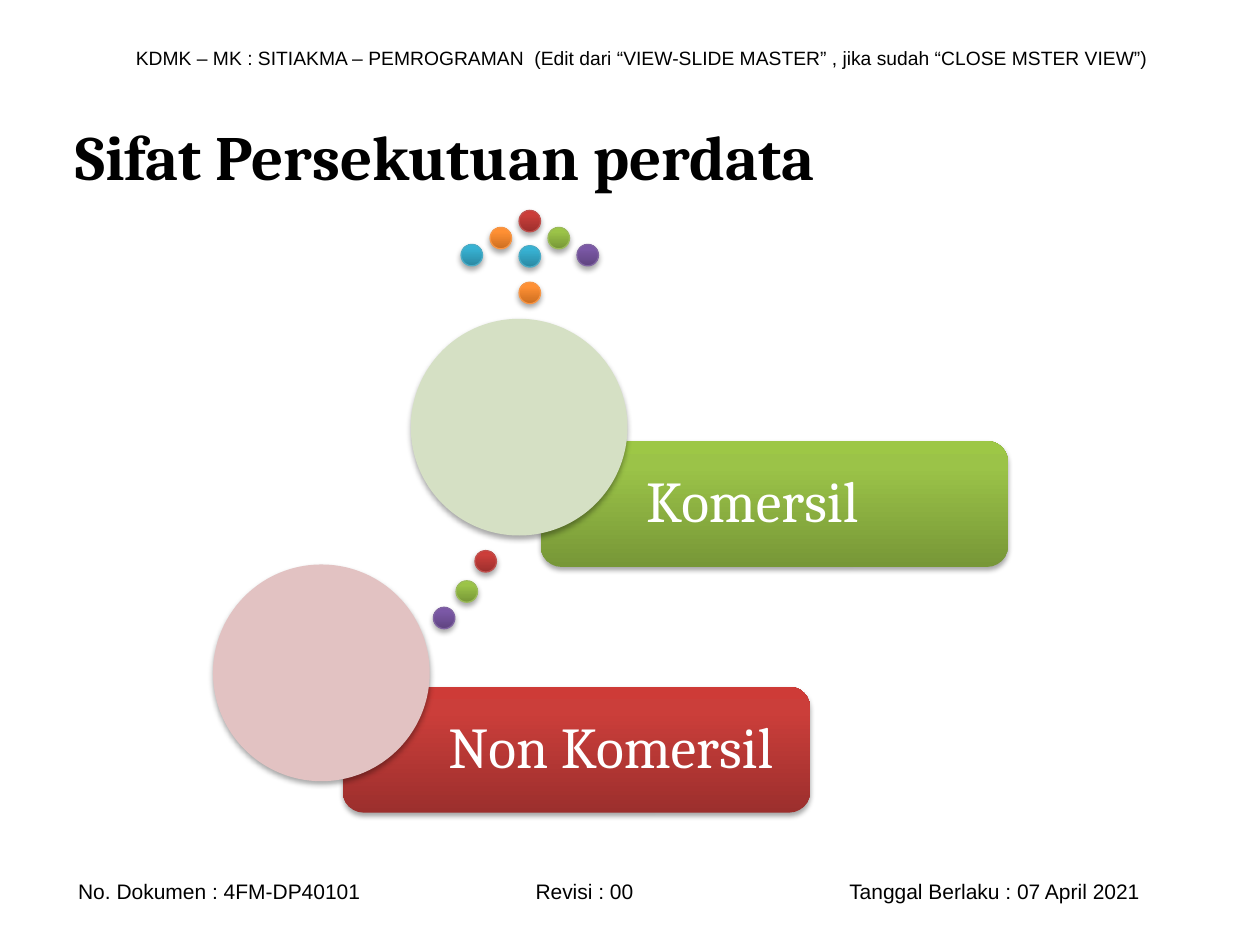
import copy

import pptx
import pptx.dml.color
import pptx.enum.shapes
import pptx.enum.text
import pptx.oxml
import pptx.oxml.ns
import pptx.util
from lxml import etree

SLIDE_WIDTH = pptx.util.Inches(10)
SLIDE_HEIGHT = pptx.util.Inches(7.5)
COLUMNS, ROWS = 100, 75
DOT_SIZE = 1.7
CIRCLE_SIZE = 17.2
BAR_OFFSET = (10.3, 9.7)
BAR_SIZE = (37.1, 10)

COLORS = {"black": "000000", "white": "FFFFFF",
          "pale_red": "E2C2C2", "pale_green": "D5E0C4"}
GRADIENTS = {
    "red": ("9C2F2D", "CB3E3A", "CE3B37"),
    "green": ("779737", "9BC348", "9DC746"),
    "purple": ("5F4480", "7B58A6", "7C57A8"),
    "blue": ("2A88A2", "37B1D2", "34B4D6"),
    "orange": ("CC6E20", "FF9034", "FF9136"),
}
OUTLINES = {"red": "C0504D", "green": "9BBB59", "purple": "8064A2",
            "blue": "4BACC6", "orange": "F79646"}
STOP_POSITIONS = (0, 0.8, 1)

TITLE_FONT = {"name": "Cambria", "size": pptx.util.Pt(36), "bold": True}
LABEL_FONT = {"name": "Cambria", "size": pptx.util.Pt(33)}
HEADER_FONT = {"name": "Arial", "size": pptx.util.Pt(11)}
FOOTER_FONT = {"name": "Arial", "size": pptx.util.Pt(12)}

ARCH = [(36.6 + 2.3 * index, 16.7 + 1.35 * abs(index - 2), color)
        for index, color in enumerate(("blue", "orange", "red", "green", "purple"))]
STEM = [(41.2, 19.5, "blue"), (41.2, 22.4, "orange")]
TRAIL = [(37.7, 43.7, "red"), (36.2, 46.1, "green"), (34.4, 48.2, "purple")]
BRANCHES = [(16.9, 44.8, "red", "Non Komersil"),
            (32.6, 25.3, "green", "Komersil")]


def across(columns):
    return round(SLIDE_WIDTH * columns / COLUMNS)


def down(rows):
    return round(SLIDE_HEIGHT * rows / ROWS)


def box(left, top, width, height):
    return across(left), down(top), across(width), down(height)


def rgb(value):
    return pptx.dml.color.RGBColor.from_string(value)


def set_attributes(target, values):
    for name, value in values.items():
        setattr(target, name, value)


def write_text(shape, text, font, color, alignment=pptx.enum.text.PP_ALIGN.LEFT,
               tabs=(), **frame_values):
    frame = shape.text_frame
    set_attributes(frame, {"word_wrap": True,
                           "auto_size": pptx.enum.text.MSO_AUTO_SIZE.NONE,
                           "vertical_anchor": pptx.enum.text.MSO_ANCHOR.MIDDLE,
                           **frame_values})
    paragraph = frame.paragraphs[0]
    paragraph.alignment = alignment
    if tabs:
        properties = paragraph._p.get_or_add_pPr()
        tab_list = etree.SubElement(properties, pptx.oxml.ns.qn("a:tabLst"))
        for position in tabs:
            etree.SubElement(tab_list, pptx.oxml.ns.qn("a:tab"),
                             pos=str(across(position)), algn="l")
    run = paragraph.add_run()
    run.text = text
    set_attributes(run.font, font)
    run.font.color.rgb = rgb(COLORS[color])
    return paragraph


def add_title(slide, text):
    title = slide.shapes.title
    title.left, title.top, title.width, title.height = box(5, 6.1, 90, 12.5)
    write_text(title, text, TITLE_FONT, "black")


def add_caption(slide, place, text, font, **options):
    caption = slide.shapes.add_textbox(*box(*place))
    write_text(caption, text, font, "black", **options)


def add_shadow(shape):
    shape.shadow.inherit = False
    effects = shape._element.spPr.find(pptx.oxml.ns.qn("a:effectLst"))
    effects.append(pptx.oxml.parse_xml(
        f'<a:outerShdw {pptx.oxml.ns.nsdecls("a")} blurRad="40000" dist="23000" '
        f'dir="5400000" rotWithShape="0"><a:srgbClr val="{COLORS["black"]}">'
        '<a:alpha val="35000"/></a:srgbClr></a:outerShdw>'))


def fill_gradient(shape, color):
    shape.fill.gradient()
    shape.fill.gradient_angle = 90
    stop_list = shape._element.spPr.find(".//" + pptx.oxml.ns.qn("a:gsLst"))
    stop_list.append(copy.deepcopy(stop_list[-1]))
    for stop, position, value in zip(shape.fill.gradient_stops, STOP_POSITIONS,
                                     GRADIENTS[color]):
        stop.position = position
        stop.color.rgb = rgb(value)


def add_figure(slide, kind, place):
    shape = slide.shapes.add_shape(kind, *box(*place))
    shape.line.fill.background()
    add_shadow(shape)
    return shape


def add_dot(slide, left, top, color):
    dot = add_figure(slide, pptx.enum.shapes.MSO_SHAPE.OVAL,
                     (left, top, DOT_SIZE, DOT_SIZE))
    fill_gradient(dot, color)
    dot.line.color.rgb = rgb(OUTLINES[color])
    dot.line.width = pptx.util.Pt(0.75)


def add_branch(slide, left, top, color, text):
    bar = add_figure(slide, pptx.enum.shapes.MSO_SHAPE.ROUNDED_RECTANGLE,
                     (left + BAR_OFFSET[0], top + BAR_OFFSET[1], *BAR_SIZE))
    fill_gradient(bar, color)
    paragraph = write_text(bar, text, LABEL_FONT, "white",
                           margin_left=across(7.9), margin_right=across(1.4),
                           margin_top=down(1.4), margin_bottom=down(1.4))
    paragraph.line_spacing = 0.9
    circle = add_figure(slide, pptx.enum.shapes.MSO_SHAPE.OVAL,
                        (left, top, CIRCLE_SIZE, CIRCLE_SIZE))
    circle.fill.solid()
    circle.fill.fore_color.rgb = rgb(COLORS["pale_" + color])


def main():
    presentation = pptx.Presentation()
    presentation.slide_width = SLIDE_WIDTH
    presentation.slide_height = SLIDE_HEIGHT
    slide = presentation.slides.add_slide(presentation.slide_layouts[5])
    add_caption(slide, (9.8, 3.1, 83.5, 2.9),
                "KDMK – MK : SITIAKMA – PEMROGRAMAN  (Edit dari “VIEW-SLIDE MASTER” , "
                "jika sudah “CLOSE MSTER VIEW”)", HEADER_FONT,
                alignment=pptx.enum.text.PP_ALIGN.JUSTIFY)
    add_caption(slide, (2, 69.2, 94.5, 3),
                "No. Dokumen : 4FM-DP40101\tRevisi : 00\tTanggal Berlaku : 07 April 2021",
                FOOTER_FONT, tabs=(36.3, 61.2), margin_left=across(4.2))
    add_title(slide, "Sifat Persekutuan perdata")
    for dot in TRAIL + ARCH + STEM:
        add_dot(slide, *dot)
    for branch in BRANCHES:
        add_branch(slide, *branch)
    presentation.save("out.pptx")


if __name__ == "__main__":
    main()
